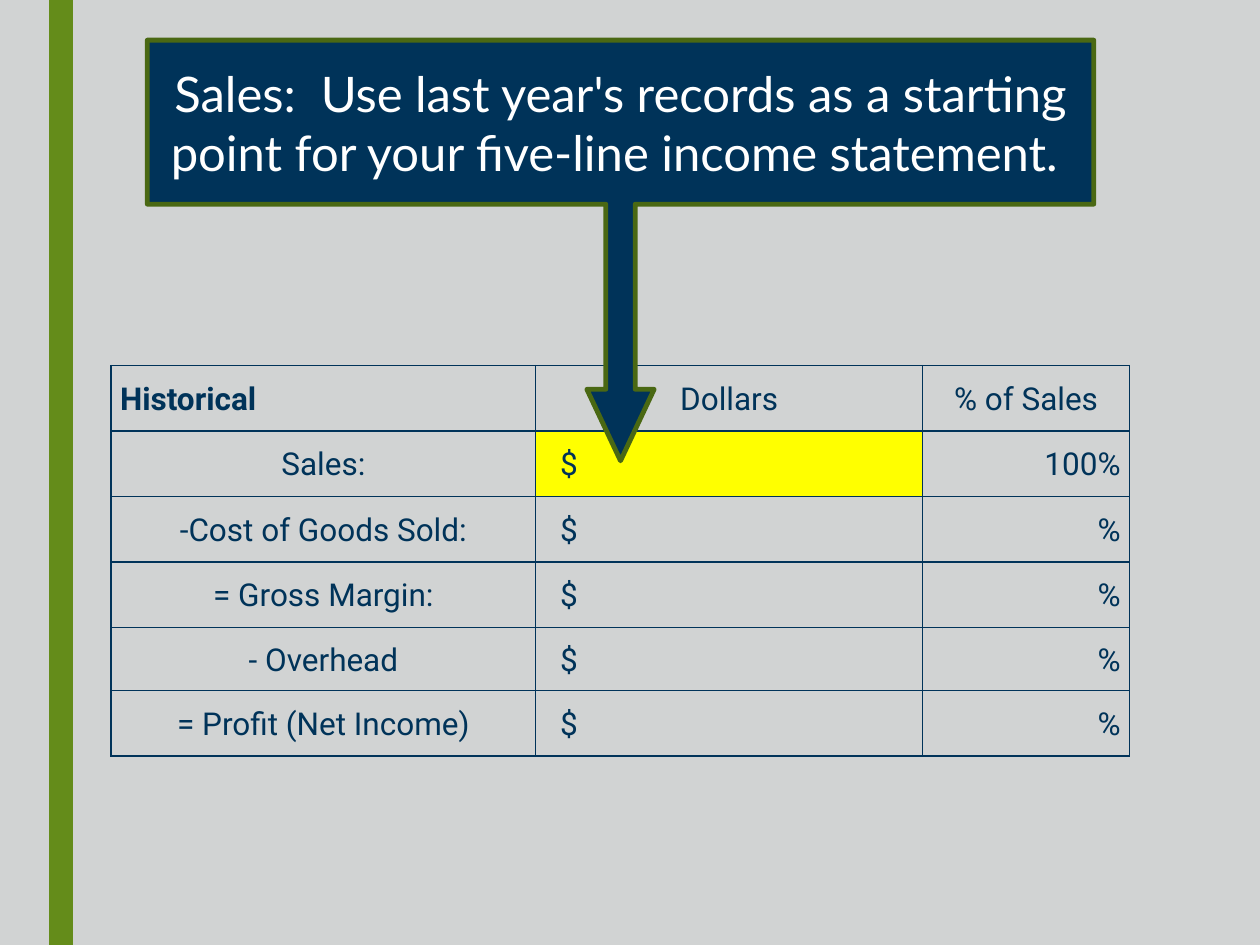
"""Build the slide that explains the sales line of a five-line income statement."""
from dataclasses import dataclass

from lxml import etree
from pptx import Presentation
from pptx.dml.color import RGBColor
from pptx.enum import shapes, text
from pptx.oxml import ns
from pptx.util import Cm, Pt

COLOURS = {
    "page": "D1D3D3",
    "stripe": "648C1A",
    "navy": "003359",
    "outline": "4A6813",
    "highlight": "FFFF00",
    "white": "FFFFFF",
}
COLUMN_WIDTHS = (8.56, 7.8, 4.17)
ROW_HEIGHTS = (1.32, 1.32, 1.32, 1.32, 1.27, 1.32)
CELL_INSET = 0.18
DOLLAR_INSET = 0.49


@dataclass
class Place:
    left: float
    top: float
    width: float
    height: float

    def lengths(self) -> tuple:
        return tuple(Cm(value) for value in (self.left, self.top, self.width, self.height))


@dataclass
class CellStyle:
    align: text.PP_ALIGN
    inset: float = CELL_INSET
    bold: bool = False
    fill: str = ""


@dataclass
class StatementLine:
    label: str
    share: str = "%"
    dollar_fill: str = ""


STATEMENT = (
    StatementLine("Sales:", "100%", "highlight"),
    StatementLine("-Cost of Goods Sold:"),
    StatementLine("= Gross Margin:"),
    StatementLine("- Overhead"),
    StatementLine("= Profit (Net Income)"),
)


def colour(name: str) -> RGBColor:
    return RGBColor.from_string(COLOURS[name])


def add_filled_shape(page, kind, place: Place, fill: str):
    shape = page.shapes.add_shape(kind, *place.lengths())
    shape.shadow.inherit = False
    shape.fill.solid()
    shape.fill.fore_color.rgb = colour(fill)
    shape.line.fill.background()
    return shape


def format_paragraph(para, align, font: str, size: float, ink: str, bold: bool = False) -> None:
    para.alignment = align
    for span in para.runs:
        span.font.name = font
        span.font.size = Pt(size)
        span.font.bold = bold
        span.font.color.rgb = colour(ink)


def add_borders(cell, ink: str, width: float) -> None:
    properties = cell._tc.get_or_add_tcPr()
    for side in ("lnL", "lnR", "lnT", "lnB"):
        line = etree.SubElement(properties, ns.qn(f"a:{side}"), w=str(Pt(width)))
        fill = etree.SubElement(line, ns.qn("a:solidFill"))
        etree.SubElement(fill, ns.qn("a:srgbClr"), val=COLOURS[ink])


def fill_cell(cell, words: str, style: CellStyle) -> None:
    cell.text_frame.text = words
    cell.vertical_anchor = text.MSO_ANCHOR.MIDDLE
    cell.margin_left, cell.margin_right = Cm(style.inset), Cm(CELL_INSET)
    cell.margin_top = cell.margin_bottom = 0
    para = cell.text_frame.paragraphs[0]
    para.line_spacing = 1.07
    format_paragraph(para, style.align, "Roboto", 18, "navy", style.bold)
    add_borders(cell, "navy", 1)
    if style.fill:
        cell.fill.solid()
        cell.fill.fore_color.rgb = colour(style.fill)
    else:
        cell.fill.background()


def add_statement(page) -> None:
    left, centre, right = text.PP_ALIGN.LEFT, text.PP_ALIGN.CENTER, text.PP_ALIGN.RIGHT
    place = Place(2.24, 7.37, sum(COLUMN_WIDTHS), sum(ROW_HEIGHTS))
    table = page.shapes.add_table(len(ROW_HEIGHTS), len(COLUMN_WIDTHS), *place.lengths()).table
    table.first_row = table.horz_banding = False
    for column, width in zip(table.columns, COLUMN_WIDTHS):
        column.width = Cm(width)
    for row, height in zip(table.rows, ROW_HEIGHTS):
        row.height = Cm(height)
    rows = [[
        ("Historical", CellStyle(left, bold=True)),
        ("Dollars", CellStyle(centre)),
        ("% of Sales", CellStyle(centre)),
    ]]
    for line in STATEMENT:
        rows.append([
            (line.label, CellStyle(centre)),
            ("$", CellStyle(left, DOLLAR_INSET, fill=line.dollar_fill)),
            (line.share, CellStyle(right)),
        ])
    for row, contents in zip(table.rows, rows):
        for cell, (words, style) in zip(row.cells, contents):
            fill_cell(cell, words, style)


def add_callout(page) -> None:
    kind = shapes.MSO_SHAPE.DOWN_ARROW_CALLOUT
    box = add_filled_shape(page, kind, Place(2.97, 0.81, 19.08, 8.48), "navy")
    for index, value in enumerate((0.07, 0.08, 0.17, 0.39)):
        box.adjustments[index] = value
    box.line.color.rgb = colour("outline")
    box.line.width = Pt(2.75)
    frame = box.text_frame
    frame.word_wrap = True
    frame.vertical_anchor = text.MSO_ANCHOR.MIDDLE
    frame.text = (
        "Sales:  Use last year's records as a starting point "
        "for your five-line income statement. "
    )
    format_paragraph(frame.paragraphs[0], text.PP_ALIGN.CENTER, "Lato", 28, "white")


def main() -> None:
    deck = Presentation()
    deck.slide_width, deck.slide_height = Cm(25.4), Cm(19.05)
    page = deck.slides.add_slide(deck.slide_layouts[6])
    page.background.fill.solid()
    page.background.fill.fore_color.rgb = colour("page")
    add_filled_shape(page, shapes.MSO_SHAPE.RECTANGLE, Place(0.99, 0, 0.48, 19.05), "stripe")
    add_statement(page)
    add_callout(page)
    deck.save("out.pptx")


if __name__ == "__main__":
    main()
